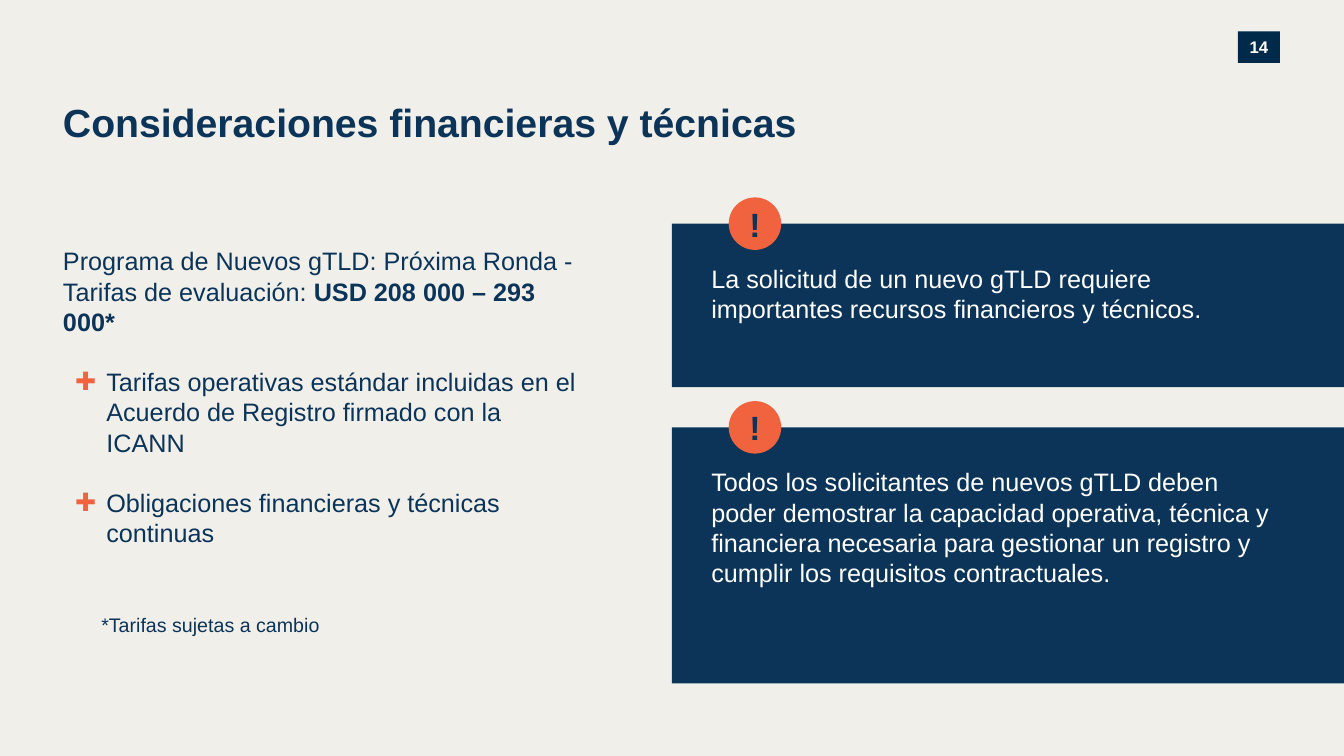
from lxml import etree
from pptx import Presentation
from pptx.dml.color import RGBColor
from pptx.enum.shapes import MSO_SHAPE
from pptx.enum.text import MSO_ANCHOR, MSO_AUTO_SIZE, PP_ALIGN
from pptx.oxml.ns import qn
from pptx.util import Inches, Pt

RECTANGLE, OVAL = MSO_SHAPE.RECTANGLE, MSO_SHAPE.OVAL
TOP, MIDDLE = MSO_ANCHOR.TOP, MSO_ANCHOR.MIDDLE
LEFT, CENTER = PP_ALIGN.LEFT, PP_ALIGN.CENTER
FIXED_SIZE = MSO_AUTO_SIZE.NONE

WIDTH, HEIGHT = 13.33, 7.5
COLUMNS, ROWS = 64, 36
FONT = "Arial"
NAVY, DARK, ORANGE, WHITE, CREAM = "0B3458", "002A49", "F1633E", "FFFFFF", "F1EFEA"
NO_INSETS = (0, 0, 0, 0)
CARD_INSETS = (0.39, 0.39, 0.67, 0.3)
BADGE_SIZE, BADGE_INDENT = 2.5, 2.7

CARDS = [
    (10.65, 7.78, "La solicitud de un nuevo gTLD requiere importantes recursos "
                  "financieros y técnicos."),
    (20.35, 12.2, "Todos los solicitantes de nuevos gTLD deben poder demostrar la "
                  "capacidad operativa, técnica y financiera necesaria para gestionar "
                  "un registro y cumplir los requisitos contractuales."),
]
FEE_LABEL = "Programa de Nuevos gTLD: Próxima Ronda - Tarifas de evaluación: "
FEE_RANGE = "USD 208 000 – 293 000*"
OBLIGATIONS = [
    "Tarifas operativas estándar incluidas en el Acuerdo de Registro firmado con la ICANN",
    "Obligaciones financieras y técnicas continuas",
]


def color(value):
    return RGBColor.from_string(value)


def grid(left, top, width, height):
    column, row = WIDTH / COLUMNS, HEIGHT / ROWS
    return [Inches(left * column), Inches(top * row),
            Inches(width * column), Inches(height * row)]


def place(shape, area):
    shape.left, shape.top, shape.width, shape.height = grid(*area)


def set_frame(shape, insets=NO_INSETS, anchor=TOP):
    frame = shape.text_frame
    frame.word_wrap = True
    frame.auto_size = FIXED_SIZE
    frame.vertical_anchor = anchor
    (frame.margin_left, frame.margin_top,
     frame.margin_right, frame.margin_bottom) = map(Inches, insets)
    return frame


def write(para, text, size=18, ink=NAVY, bold=False, align=LEFT):
    para.alignment = align
    span = para.add_run()
    span.text = text
    span.font.name = FONT
    span.font.size = Pt(size)
    span.font.bold = bold
    span.font.color.rgb = color(ink)


def set_bullet(para, mark=None, margin=0, indent=0):
    properties = para._p.get_or_add_pPr()
    properties.set("marL", str(Inches(margin)))
    properties.set("indent", str(Inches(indent)))
    if mark is None:
        etree.SubElement(properties, qn("a:buNone"))
        return
    tint = etree.SubElement(properties, qn("a:buClr"))
    etree.SubElement(tint, qn("a:srgbClr")).set("val", ORANGE)
    etree.SubElement(properties, qn("a:buFont")).set("typeface", FONT)
    etree.SubElement(properties, qn("a:buChar")).set("char", mark)


def add_block(page, kind, area, fill, text, insets=NO_INSETS, anchor=MIDDLE, **style):
    block = page.shapes.add_shape(kind, *grid(*area))
    block.shadow.inherit = False
    block.fill.solid()
    block.fill.fore_color.rgb = color(fill)
    block.line.fill.background()
    write(set_frame(block, insets, anchor).paragraphs[0], text, **style)


def add_card(page, top, height, text):
    left = COLUMNS / 2
    add_block(page, RECTANGLE, (left, top, left, height), NAVY, text,
              insets=CARD_INSETS, anchor=TOP, ink=WHITE)
    badge = (left + BADGE_INDENT, top - BADGE_SIZE / 2, BADGE_SIZE, BADGE_SIZE)
    add_block(page, OVAL, badge, ORANGE, "!", size=24, bold=True, align=CENTER)


def fill_title(page):
    title = page.shapes.title
    place(title, (3, 4.7, 46, 5.23))
    write(set_frame(title).paragraphs[0], "Consideraciones financieras y técnicas",
          size=28, bold=True)


def fill_body(page):
    body = page.placeholders[1]
    place(body, (3, 11.7, 24.5, 20.45))
    frame = set_frame(body)
    intro = frame.paragraphs[0]
    intro.space_before = Pt(0)
    set_bullet(intro)
    write(intro, FEE_LABEL)
    write(intro, FEE_RANGE, bold=True)
    for obligation in OBLIGATIONS:
        para = frame.add_paragraph()
        para.space_before = Pt(21.5)
        set_bullet(para, "✚", 0.43, -0.31)
        write(para, obligation)


def add_footnote(page):
    box = page.shapes.add_textbox(*grid(4.35, 28.95, 17.4, 1.35))
    frame = set_frame(box, (0.1, 0.05, 0.1, 0.05))
    write(frame.paragraphs[0], "*Tarifas sujetas a cambio", size=14)


def main():
    deck = Presentation()
    deck.slide_width, deck.slide_height = Inches(WIDTH), Inches(HEIGHT)
    page = deck.slides.add_slide(deck.slide_layouts[1])
    page.background.fill.solid()
    page.background.fill.fore_color.rgb = color(CREAM)
    add_block(page, RECTANGLE, (58.95, 1.5, 2, 1.5), DARK, "14",
              size=12, ink=WHITE, bold=True, align=CENTER)
    fill_title(page)
    fill_body(page)
    for top, height, text in CARDS:
        add_card(page, top, height, text)
    add_footnote(page)
    deck.save("out.pptx")


if __name__ == "__main__":
    main()
